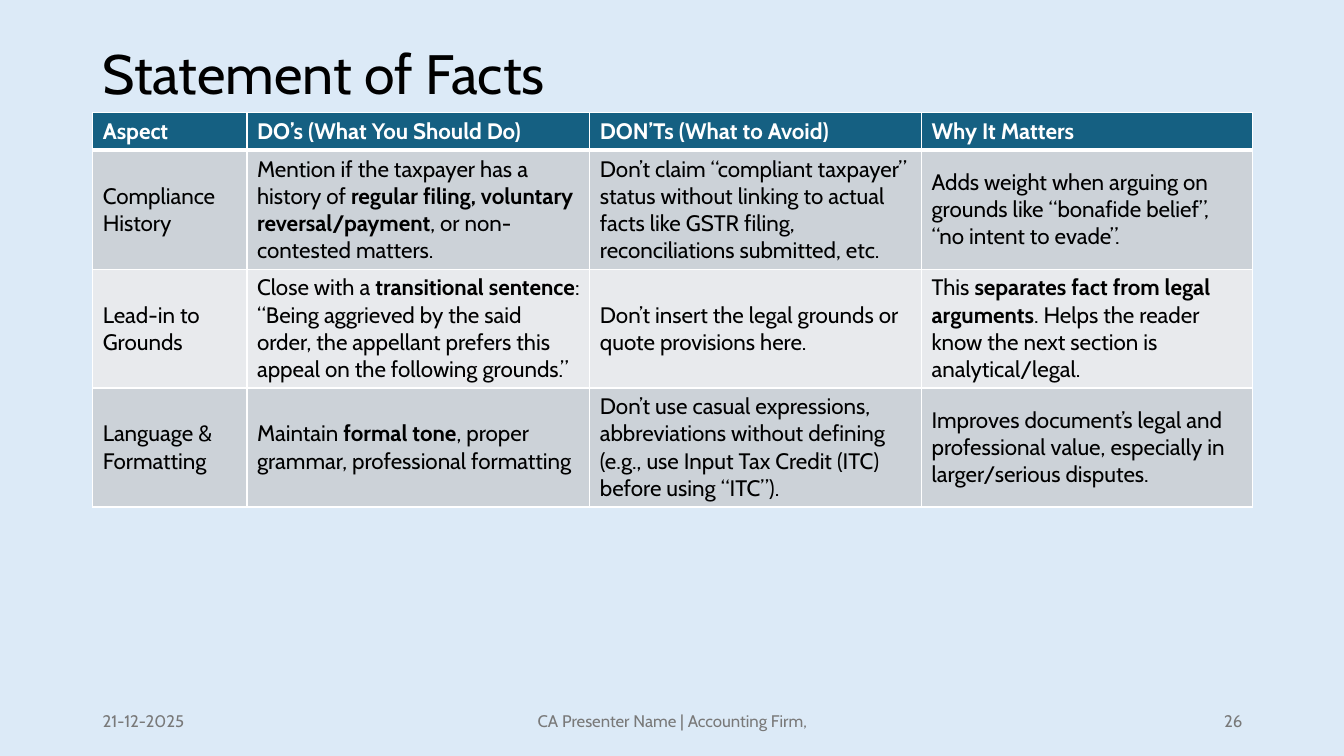
from dataclasses import dataclass

from lxml.etree import SubElement
from pptx import Presentation
from pptx.dml.color import RGBColor
from pptx.enum.text import MSO_ANCHOR, PP_ALIGN
from pptx.oxml.ns import qn
from pptx.slide import Slide
from pptx.table import _Cell
from pptx.text.text import TextFrame
from pptx.util import Inches, Pt


@dataclass(frozen=True)
class Theme:
    font: str = "Cabin"
    background: str = "DCEAF7"
    header: str = "156082"
    bands: tuple[str, str] = ("CCD2D8", "E8EAED")
    border: str = "FFFFFF"
    light: str = "FFFFFF"
    dark: str = "000000"
    muted: str = "797979"
    title_size: float = 39.6
    table_size: float = 16
    footer_size: float = 12
    thin: float = 1
    thick: float = 3


@dataclass(frozen=True)
class Footer:
    text: str
    left: float
    width: float
    align: PP_ALIGN


THEME = Theme()
TABLE_LEFT, TABLE_TOP = 0.92, 1.12
COLUMN_WIDTHS = (1.53, 3.4, 3.29, 3.28)
HEADER_HEIGHT, ROW_HEIGHT = 0.37, 1.18
ROWS = (
    ("Aspect", "DO’s (What You Should Do)", "DON’Ts (What to Avoid)", "Why It Matters"),
    (
        "Compliance History",
        "Mention if the taxpayer has a history of **regular filing, voluntary "
        "reversal/payment**, or non-contested matters.",
        "Don’t claim “compliant taxpayer” status without linking to actual facts "
        "like GSTR filing, reconciliations submitted, etc.",
        "Adds weight when arguing on grounds like “bonafide belief”, “no intent to evade”.",
    ),
    (
        "Lead-in to Grounds",
        "Close with a **transitional sentence**: “Being aggrieved by the said order, "
        "the appellant prefers this appeal on the following grounds.”",
        "Don’t insert the legal grounds or quote provisions here.",
        "This **separates fact from legal arguments**. Helps the reader know the "
        "next section is analytical/legal.",
    ),
    (
        "Language & Formatting",
        "Maintain **formal tone**, proper grammar, professional formatting",
        "Don’t use casual expressions, abbreviations without defining (e.g., use "
        "Input Tax Credit (ITC) before using “ITC”).",
        "Improves document’s legal and professional value, especially in "
        "larger/serious disputes.",
    ),
)
FOOTERS = (
    Footer("21-12-2025", 0.92, 3, PP_ALIGN.LEFT),
    Footer("CA Presenter Name | Accounting Firm,", 4.42, 4.5, PP_ALIGN.CENTER),
    Footer("26", 9.42, 3, PP_ALIGN.RIGHT),
)


def write_text(
    frame: TextFrame,
    text: str,
    *,
    size: float,
    color: str,
    bold: bool = False,
    align: PP_ALIGN = PP_ALIGN.LEFT,
    line_spacing: float = 1.0,
) -> None:
    frame.word_wrap = True
    paragraph = frame.paragraphs[0]
    paragraph.alignment = align
    paragraph.line_spacing = line_spacing
    for index, part in enumerate(text.split("**")):
        run = paragraph.add_run()
        run.text = part
        run.font.name = THEME.font
        run.font.size = Pt(size)
        run.font.bold = bold or index % 2 == 1
        run.font.color.rgb = RGBColor.from_string(color)


def add_label(
    slide: Slide, text: str, left: float, top: float, width: float, height: float, **text_format
) -> None:
    shape = slide.shapes.add_textbox(Inches(left), Inches(top), Inches(width), Inches(height))
    shape.text_frame.vertical_anchor = MSO_ANCHOR.MIDDLE
    write_text(shape.text_frame, text, **text_format)


def set_borders(cell: _Cell, top: float, bottom: float) -> None:
    properties = cell._tc.get_or_add_tcPr()
    widths = {"a:lnL": THEME.thin, "a:lnR": THEME.thin, "a:lnT": top, "a:lnB": bottom}
    for position, (tag, width) in enumerate(widths.items()):
        line = SubElement(properties, qn(tag), w=str(Pt(width)))
        fill = SubElement(line, qn("a:solidFill"))
        SubElement(fill, qn("a:srgbClr"), val=THEME.border)
        properties.insert(position, line)


def add_facts_table(slide: Slide) -> None:
    body_count = len(ROWS) - 1
    table = slide.shapes.add_table(
        len(ROWS),
        len(COLUMN_WIDTHS),
        Inches(TABLE_LEFT),
        Inches(TABLE_TOP),
        Inches(sum(COLUMN_WIDTHS)),
        Inches(HEADER_HEIGHT + body_count * ROW_HEIGHT),
    ).table
    for column, width in zip(table.columns, COLUMN_WIDTHS):
        column.width = Inches(width)
    for row_index, texts in enumerate(ROWS):
        is_header = row_index == 0
        table.rows[row_index].height = Inches(HEADER_HEIGHT if is_header else ROW_HEIGHT)
        fill = THEME.header if is_header else THEME.bands[(row_index - 1) % 2]
        for column_index, text in enumerate(texts):
            cell = table.cell(row_index, column_index)
            cell.vertical_anchor = MSO_ANCHOR.MIDDLE
            cell.fill.solid()
            cell.fill.fore_color.rgb = RGBColor.from_string(fill)
            set_borders(
                cell,
                top=THEME.thick if row_index == 1 else THEME.thin,
                bottom=THEME.thick if is_header else THEME.thin,
            )
            write_text(
                cell.text_frame,
                text,
                size=THEME.table_size,
                color=THEME.light if is_header else THEME.dark,
                bold=is_header,
            )


def main() -> None:
    presentation = Presentation()
    presentation.slide_width = Inches(13.33)
    presentation.slide_height = Inches(7.5)
    slide = presentation.slides.add_slide(presentation.slide_layouts[6])
    slide.background.fill.solid()
    slide.background.fill.fore_color.rgb = RGBColor.from_string(THEME.background)
    add_label(
        slide, "Statement of Facts", 0.92, 0.4, 11.5, 0.72,
        size=THEME.title_size, color=THEME.dark, line_spacing=0.9,
    )
    add_facts_table(slide)
    for footer in FOOTERS:
        add_label(
            slide, footer.text, footer.left, 6.95, footer.width, 0.4,
            size=THEME.footer_size, color=THEME.muted, align=footer.align,
        )
    presentation.save("out.pptx")


if __name__ == "__main__":
    main()
